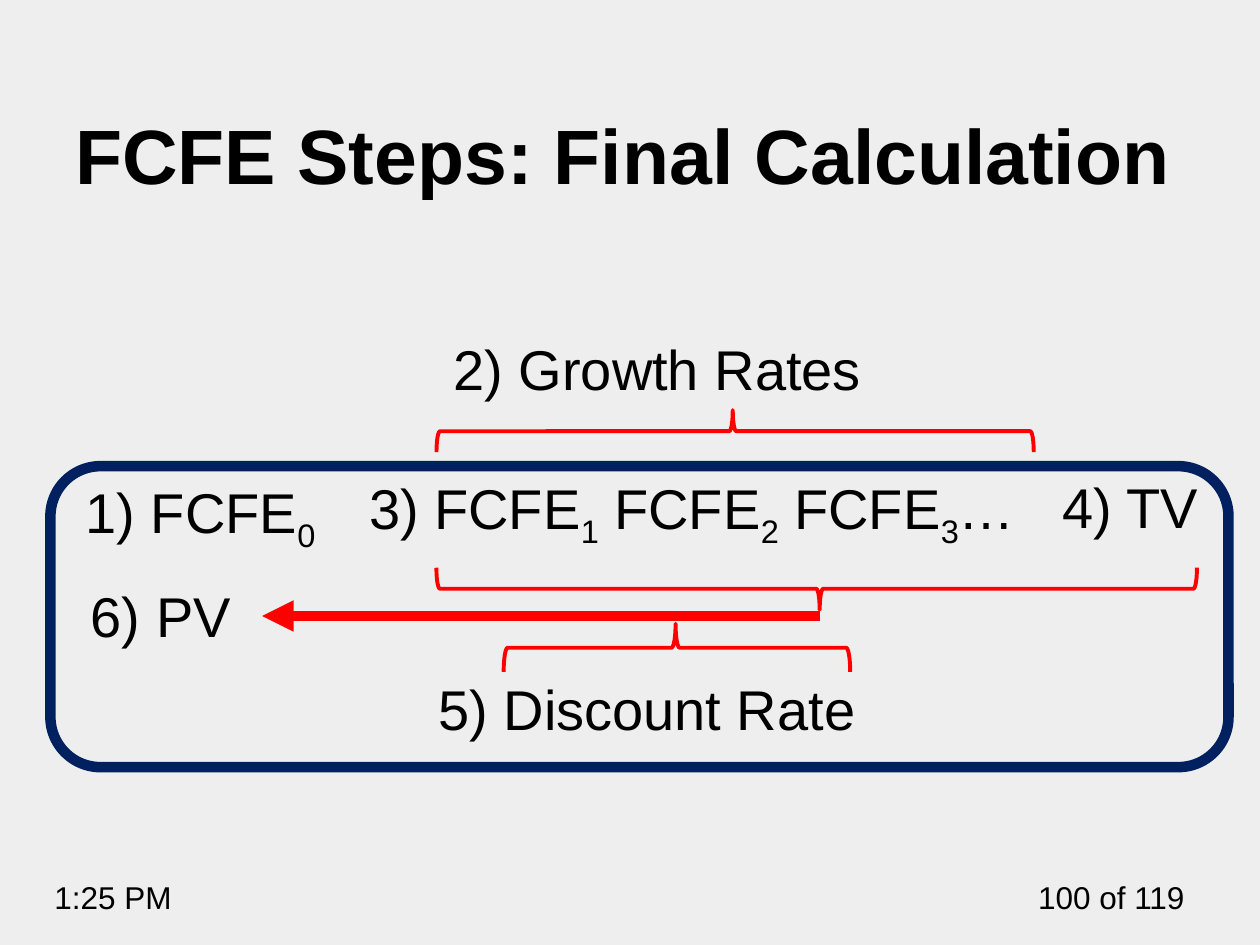
from dataclasses import dataclass
from pptx import Presentation
from pptx.dml.color import RGBColor as Rgb
from pptx.enum.shapes import MSO_CONNECTOR as Conn, MSO_SHAPE as Kind
from pptx.enum.text import MSO_ANCHOR as Anchor, PP_ALIGN as Align
from pptx.oxml.ns import qn
from pptx.util import Pt
from lxml.etree import SubElement


@dataclass(frozen=True)
class Theme:
    font: str = "Arial"
    back: Rgb = Rgb(0xEE, 0xEE, 0xEE)
    ink: Rgb = Rgb(0, 0, 0)
    red: Rgb = Rgb(0xFF, 0, 0)
    navy: Rgb = Rgb(0, 0x20, 0x60)
    title: int = 44
    body: int = 32
    foot: int = 18
    thin: float = 2.25
    thick: float = 6


THEME = Theme()


def label(slide, box, parts, size, bold=False, align=Align.LEFT, anchor=Anchor.TOP):
    """Write the parts as runs, with each part that is a lone digit as a subscript."""
    frame = slide.shapes.add_textbox(*map(Pt, box)).text_frame
    frame.word_wrap = True
    frame.vertical_anchor = anchor
    para = frame.paragraphs[0]
    para.alignment = align
    for part in parts:
        run = para.add_run()
        run.text = part
        font = run.font
        font.name, font.size, font.bold = THEME.font, Pt(size), bold
        font.color.rgb = THEME.ink
        if part.isdigit():
            font._element.set("baseline", "-25000")


def outline(slide, kind, box, color, width):
    shape = slide.shapes.add_shape(kind, *map(Pt, box))
    shape.shadow.inherit = False
    shape.fill.background()
    shape.line.color.rgb = color
    shape.line.width = Pt(width)
    return shape


def brace(slide, box, turn):
    """Turn a left brace so that it fills the box: 90 points up, 270 points down."""
    x, y, w, h = box
    frame = (x + (w - h) / 2, y + (h - w) / 2, h, w)
    shape = outline(slide, Kind.LEFT_BRACE, frame, THEME.red, THEME.thin)
    shape.adjustments[0] = 0.083
    shape.adjustments[1] = 0.504
    shape.rotation = turn


def arrow(slide, start, end):
    line = slide.shapes.add_connector(Conn.STRAIGHT, *map(Pt, start + end))
    line.line.color.rgb = THEME.red
    line.line.width = Pt(THEME.thick)
    SubElement(line.line._get_or_add_ln(), qn("a:tailEnd"), type="triangle")
    SubElement(line._element.spPr, qn("a:effectLst"))


def diagram(slide, box):
    x, y, w, h = box
    steps = [
        (13, 3, 162, ["1) FCFE", "0"]),
        (223.2, -79, 282, ["2) Growth Rates"]),
        (175, 0.6, 390, ["3) FCFE", "1", " FCFE", "2", " FCFE", "3", "…"]),
        (571, 0, 108, ["4) TV"]),
        (214.6, 115.2, 312, ["5) Discount Rate"]),
        (16, 62.6, 174, ["6) PV"]),
    ]
    for dx, dy, wide, parts in steps:
        label(slide, (x + dx, y + dy, wide, 37), parts, THEME.body)
    brace(slide, (x + 220.6, y - 32, 341.3, 24), 90)
    brace(slide, (x + 220.6, y + 58, 434.6, 24), 270)
    brace(slide, (x + 259, y + 90, 198, 27.5), 90)
    level = y + 85.6
    arrow(slide, (x + 440, level), (x + 121, level))
    outline(slide, Kind.ROUNDED_RECTANGLE, box, THEME.navy, THEME.thick)


def footer(slide, box):
    x, y, w, h = box
    wide = 114
    label(slide, (x, y, wide, h), ["1:25 PM"], THEME.foot)
    label(slide, (x + w - wide, y, wide, h), ["100 of 119"], THEME.foot, align=Align.RIGHT)


def main():
    deck = Presentation()
    deck.slide_width, deck.slide_height = Pt(720), Pt(540)
    slide = deck.slides.add_slide(deck.slide_layouts[6])
    slide.background.fill.solid()
    slide.background.fill.fore_color.rgb = THEME.back
    footer(slide, (24, 498, 660, 29))
    label(slide, (36, 28, 648, 90), ["FCFE Steps: Final Calculation"],
          THEME.title, bold=True, anchor=Anchor.BOTTOM)
    diagram(slide, (28.8, 266.4, 673.2, 172))
    deck.save("out.pptx")


if __name__ == "__main__":
    main()
